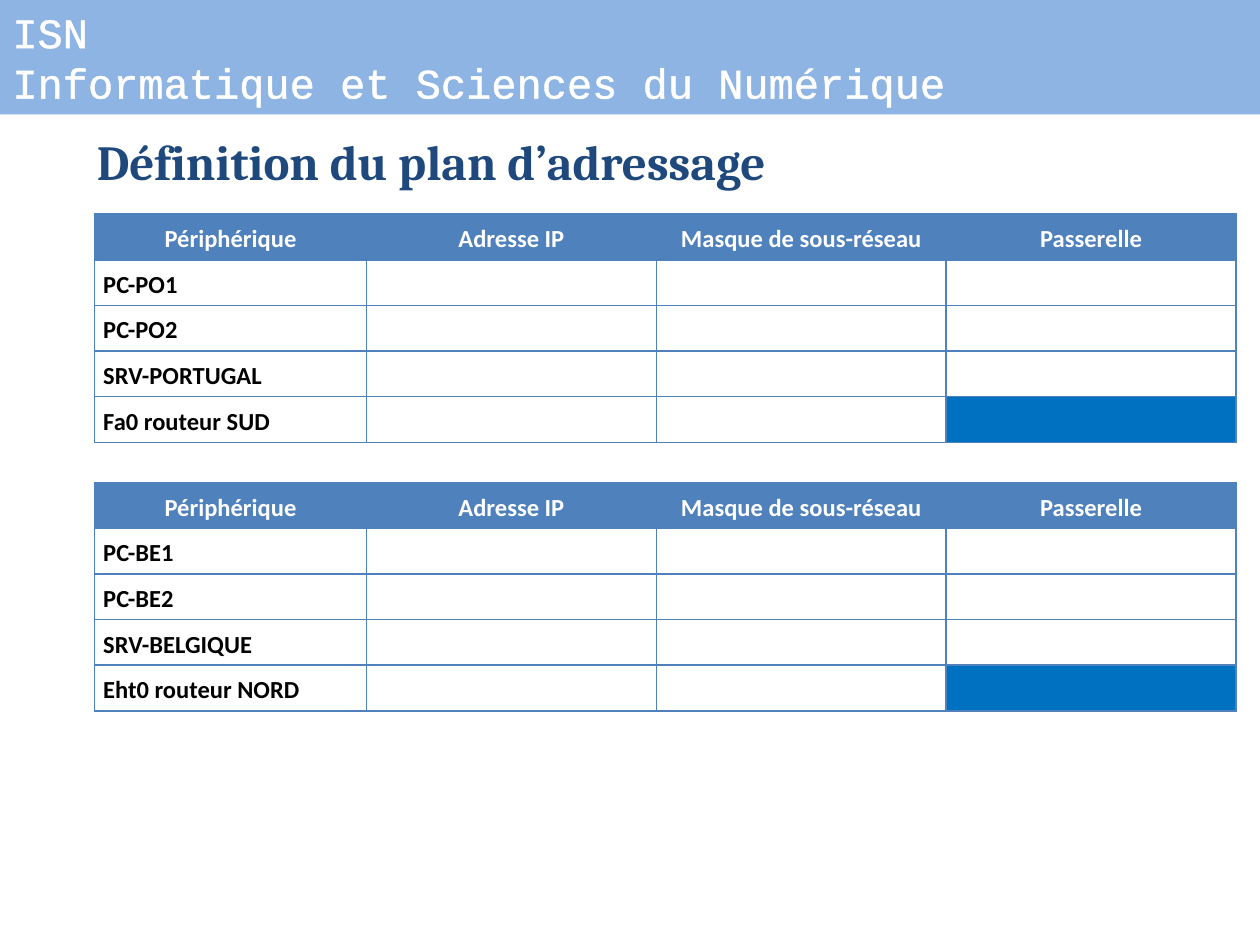
import pptx
import pptx.dml.color
import pptx.enum.shapes
import pptx.enum.text
import pptx.oxml
import pptx.oxml.ns
import pptx.util

Pt = pptx.util.Pt
RGBColor = pptx.dml.color.RGBColor
Align = pptx.enum.text.PP_ALIGN
Anchor = pptx.enum.text.MSO_ANCHOR

NAVY = RGBColor(0x1F, 0x49, 0x7D)
BLUE = RGBColor(0x4F, 0x81, 0xBD)
BRIGHT = RGBColor(0x00, 0x70, 0xC0)
SKY = RGBColor(0x8E, 0xB4, 0xE3)
WHITE = RGBColor(0xFF, 0xFF, 0xFF)
BLACK = RGBColor(0x00, 0x00, 0x00)

HEADERS = ["Périphérique", "Adresse IP", "Masque de sous-réseau", "Passerelle"]
PORTUGAL = ["PC-PO1", "PC-PO2", "SRV-PORTUGAL", "Fa0 routeur SUD"]
BELGIUM = ["PC-BE1", "PC-BE2", "SRV-BELGIQUE", "Eht0 routeur NORD"]
COLUMN_WIDTHS = [155.5, 165.6, 165.6, 165.6]
ROW_HEIGHT = 26.1
TABLE_LEFT = 54


def line_xml(tag, color, width):
    return pptx.oxml.parse_xml(
        f'<a:{tag} {pptx.oxml.ns.nsdecls("a")} w="{Pt(width)}">'
        f'<a:solidFill><a:srgbClr val="{color}"/></a:solidFill></a:{tag}>')


class Page:
    def __init__(self, deck):
        self.slide = deck.slides.add_slide(deck.slide_layouts[5])

    def style(self, paragraph, font, size, color, bold=False, align=Align.LEFT):
        paragraph.alignment = align
        for span in paragraph.runs:
            span.font.name = font
            span.font.size = Pt(size)
            span.font.bold = bold
            span.font.color.rgb = color

    def title(self, text, left, top, width, height):
        box = self.slide.shapes.title
        box.left, box.top, box.width, box.height = map(Pt, (left, top, width, height))
        frame = box.text_frame
        frame.text = text
        frame.word_wrap = True
        frame.auto_size = pptx.enum.text.MSO_AUTO_SIZE.NONE
        frame.vertical_anchor = Anchor.TOP
        self.style(frame.paragraphs[0], "Cambria", 28, NAVY, bold=True)

    def banner(self, text, width, height):
        box = self.slide.shapes.add_shape(
            pptx.enum.shapes.MSO_SHAPE.RECTANGLE, 0, 0, Pt(width), Pt(height))
        box.shadow.inherit = False
        box.fill.solid()
        box.fill.fore_color.rgb = SKY
        box.line.fill.background()
        frame = box.text_frame
        frame.text = text
        frame.word_wrap = True
        frame.vertical_anchor = Anchor.TOP
        for para in frame.paragraphs:
            self.style(para, "Courier New", 24, WHITE)
            for span in para.runs:
                span.font._element.insert(0, line_xml("ln", WHITE, 1.45))

    def cell(self, cell, text, fill=None, color=BLACK, align=Align.LEFT):
        cell.margin_left = cell.margin_right = Pt(5)
        cell.margin_top = cell.margin_bottom = 0
        cell.vertical_anchor = Anchor.MIDDLE
        properties = cell._tc.get_or_add_tcPr()
        for side in ("lnL", "lnR", "lnT", "lnB"):
            properties.append(line_xml(side, BLUE, 1))
        if fill is None:
            cell.fill.background()
        else:
            cell.fill.solid()
            cell.fill.fore_color.rgb = fill
        if text:
            cell.text_frame.text = text
            para = cell.text_frame.paragraphs[0]
            para.line_spacing = 1.15
            self.style(para, "Calibri", 14, color, bold=True, align=align)

    def address_table(self, devices, top):
        row_count = len(devices) + 1
        table = self.slide.shapes.add_table(
            row_count, len(HEADERS), Pt(TABLE_LEFT), Pt(top),
            Pt(sum(COLUMN_WIDTHS)), Pt(ROW_HEIGHT * row_count)).table
        table.first_row = table.horz_banding = False
        for column, width in zip(table.columns, COLUMN_WIDTHS):
            column.width = Pt(width)
        for row in table.rows:
            row.height = Pt(ROW_HEIGHT)
        for index, header in enumerate(HEADERS):
            self.cell(table.cell(0, index), header, BLUE, WHITE, Align.CENTER)
        for number, device in enumerate(devices, 1):
            router = number == len(devices)
            fills = [None, None, None, BRIGHT if router else None]
            for index, fill in enumerate(fills):
                self.cell(table.cell(number, index), "" if index else device, fill)


def main():
    deck = pptx.Presentation()
    deck.slide_width, deck.slide_height = Pt(720), Pt(540)
    page = Page(deck)
    page.title("Définition du plan d’adressage", 48.2, 71.3, 657.4, 74.9)
    page.address_table(PORTUGAL, 122.4)
    page.address_table(BELGIUM, 275.8)
    page.banner("ISN\nInformatique et Sciences du Numérique", 720, 65.4)
    deck.save("out.pptx")


if __name__ == "__main__":
    main()
